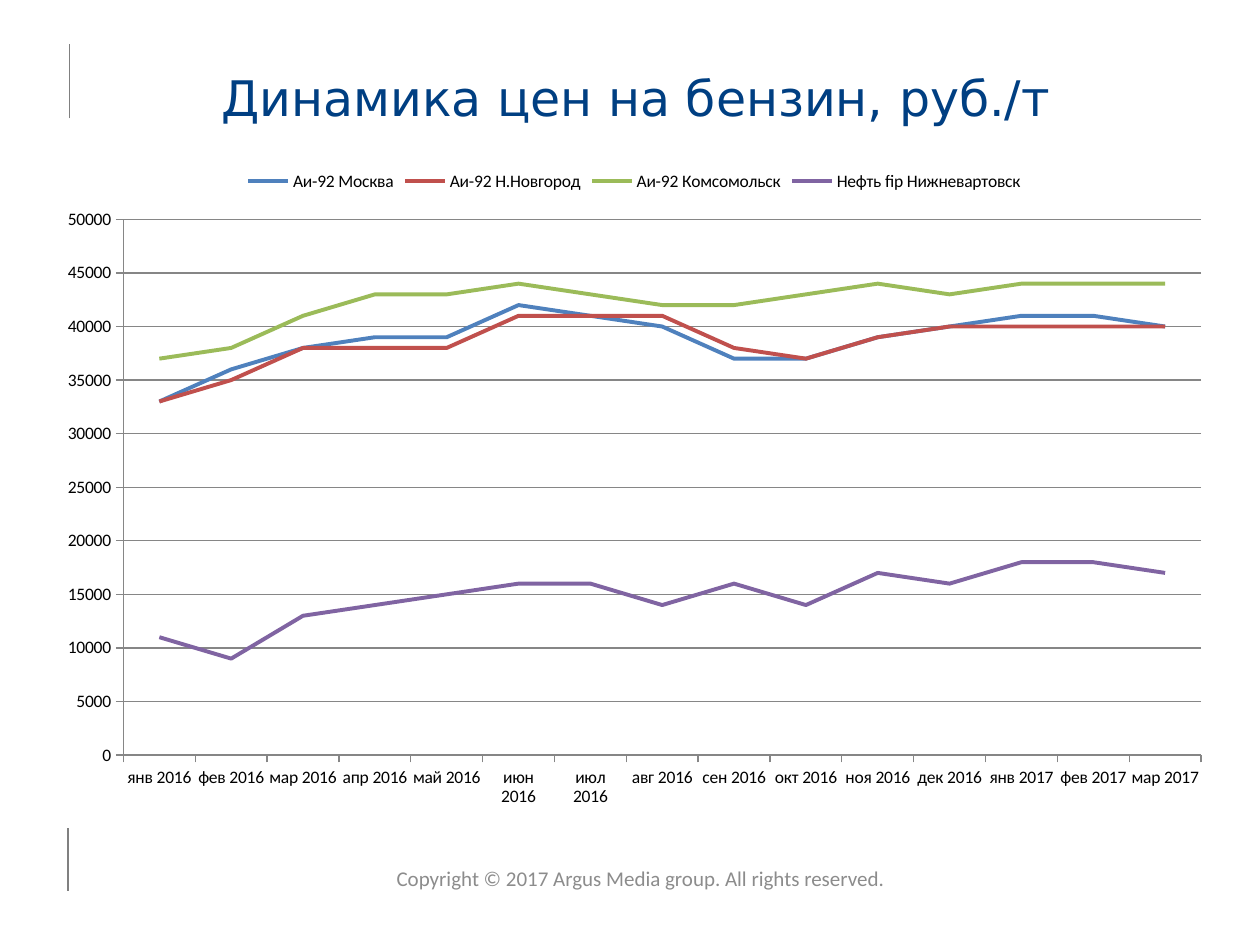
from dataclasses import dataclass

from lxml.etree import SubElement
from pptx import Presentation
from pptx.chart.data import CategoryChartData
from pptx.dml.color import RGBColor
from pptx.enum.chart import XL_CHART_TYPE, XL_LEGEND_POSITION, XL_TICK_MARK
from pptx.enum.shapes import MSO_CONNECTOR
from pptx.enum.text import MSO_ANCHOR, MSO_AUTO_SIZE, PP_ALIGN
from pptx.oxml.ns import qn
from pptx.slide import Slide
from pptx.util import Inches, Pt


@dataclass(frozen=True)
class Theme:
    title_font: str = "DejaVu Sans"
    body_font: str = "Calibri"
    title_size: float = 28
    footer_size: float = 12
    chart_size: float = 10
    title_color: str = "003F82"
    footer_color: str = "8C8C8C"
    chart_color: str = "000000"
    rule_color: str = "808080"
    grid_color: str = "868686"
    rule_width: float = 0.75
    series_width: float = 2.25


@dataclass(frozen=True)
class PriceSeries:
    name: str
    color: str
    thousands: tuple[int, ...]


@dataclass(frozen=True)
class MarginRule:
    x: float
    top: float
    bottom: float


THEME = Theme()

MONTHS = "янв фев мар апр май июн июл авг сен окт ноя дек".split()
PERIODS = [f"{month} 2016" for month in MONTHS] + [f"{month} 2017" for month in MONTHS[:3]]

PRICES = (
    PriceSeries("Аи-92 Москва", "4F81BD",
                (33, 36, 38, 39, 39, 42, 41, 40, 37, 37, 39, 40, 41, 41, 40)),
    PriceSeries("Аи-92 Н.Новгород", "C0504D",
                (33, 35, 38, 38, 38, 41, 41, 41, 38, 37, 39, 40, 40, 40, 40)),
    PriceSeries("Аи-92 Комсомольск", "9BBB59",
                (37, 38, 41, 43, 43, 44, 43, 42, 42, 43, 44, 43, 44, 44, 44)),
    PriceSeries("Нефть fip Нижневартовск", "8064A2",
                (11, 9, 13, 14, 15, 16, 16, 14, 16, 14, 17, 16, 18, 18, 17)),
)

MARGIN_RULES = (MarginRule(0.55, 0.35, 0.94), MarginRule(0.54, 6.57, 7.07))


def set_line(line, color: str, width: float) -> None:
    line.color.rgb = RGBColor.from_string(color)
    line.width = Pt(width)


def set_font(font, name: str, size: float, color: str) -> None:
    font.name = name
    font.size = Pt(size)
    font.color.rgb = RGBColor.from_string(color)


def add_margin_rule(slide: Slide, rule: MarginRule) -> None:
    connector = slide.shapes.add_connector(
        MSO_CONNECTOR.STRAIGHT,
        Inches(rule.x), Inches(rule.bottom), Inches(rule.x), Inches(rule.top))
    set_line(connector.line, THEME.rule_color, THEME.rule_width)
    SubElement(connector.element.spPr, qn("a:effectLst"))


def add_text(slide: Slide, text: str, left: float, top: float, width: float, height: float,
             *, font: str, size: float, color: str, anchor: MSO_ANCHOR = MSO_ANCHOR.TOP,
             wrap: bool = True, inset: float | None = None,
             auto_size: MSO_AUTO_SIZE = MSO_AUTO_SIZE.NONE) -> None:
    box = slide.shapes.add_textbox(Inches(left), Inches(top), Inches(width), Inches(height))
    frame = box.text_frame
    frame.word_wrap = wrap
    frame.auto_size = auto_size
    frame.vertical_anchor = anchor
    if inset is not None:
        frame.margin_left = frame.margin_right = Inches(inset)
        frame.margin_top = frame.margin_bottom = Inches(inset)
    para = frame.paragraphs[0]
    para.alignment = PP_ALIGN.CENTER
    span = para.add_run()
    span.text = text
    set_font(span.font, font, size, color)


def add_price_chart(slide: Slide) -> None:
    data = CategoryChartData(number_format="0")
    data.categories = PERIODS
    for price in PRICES:
        data.add_series(price.name, [value * 1000 for value in price.thousands])
    chart = slide.shapes.add_chart(
        XL_CHART_TYPE.LINE, Inches(0.35), Inches(1.25), Inches(9.37), Inches(5.26), data).chart
    set_font(chart.font, THEME.body_font, THEME.chart_size, THEME.chart_color)
    chart.has_title = False
    chart.has_legend = True
    chart.legend.position = XL_LEGEND_POSITION.TOP
    chart.legend.include_in_layout = False

    for axis in (chart.category_axis, chart.value_axis):
        axis.major_tick_mark = XL_TICK_MARK.OUTSIDE
        axis.minor_tick_mark = XL_TICK_MARK.NONE
        set_line(axis.format.line, THEME.grid_color, THEME.rule_width)
    value_axis = chart.value_axis
    value_axis.minimum_scale = 0
    value_axis.maximum_scale = 50000
    value_axis.major_unit = 5000
    value_axis.has_major_gridlines = True
    set_line(value_axis.major_gridlines.format.line, THEME.grid_color, THEME.rule_width)
    value_axis.tick_labels.number_format = "0"
    value_axis.tick_labels.number_format_is_linked = False

    plot = chart.plots[0]
    plot.vary_by_categories = False
    for line, price in zip(plot.series, PRICES):
        line.smooth = False
        set_line(line.format.line, price.color, THEME.series_width)


def main() -> None:
    deck = Presentation()
    deck.slide_width, deck.slide_height = Inches(10), Inches(7.5)
    slide = deck.slides.add_slide(deck.slide_layouts[6])
    for rule in MARGIN_RULES:
        add_margin_rule(slide, rule)
    add_text(slide, "Динамика цен на бензин, руб./т", 0.67, 0.33, 8.75, 0.67,
             font=THEME.title_font, size=THEME.title_size, color=THEME.title_color,
             anchor=MSO_ANCHOR.BOTTOM, inset=0)
    add_price_chart(slide)
    add_text(slide, "Copyright © 2017 Argus Media group. All rights reserved.",
             3.03, 6.82, 4.11, 0.3,
             font=THEME.body_font, size=THEME.footer_size, color=THEME.footer_color,
             wrap=False, auto_size=MSO_AUTO_SIZE.SHAPE_TO_FIT_TEXT)
    deck.save("out.pptx")


if __name__ == "__main__":
    main()
